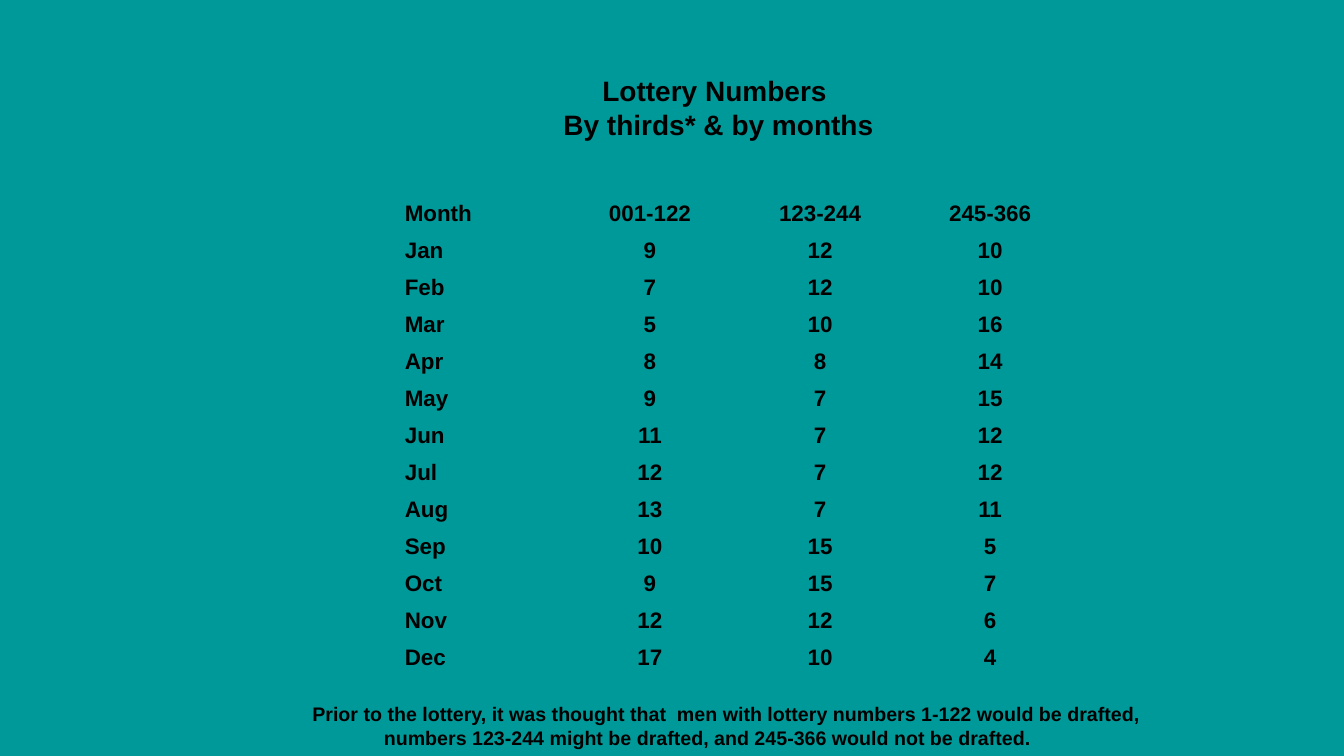
import pptx
import pptx.dml.color
import pptx.enum.text
import pptx.util

Pt = pptx.util.Pt
ALIGN = pptx.enum.text.PP_ALIGN
ANCHOR = pptx.enum.text.MSO_ANCHOR
NO_GRID_STYLE = "{2D5ABB26-0587-4C30-8999-92F81FD0307C}"

LOTTERY_ROWS = [
    ("Month", "001-122", "123-244", "245-366"),
    ("Jan", 9, 12, 10),
    ("Feb", 7, 12, 10),
    ("Mar", 5, 10, 16),
    ("Apr", 8, 8, 14),
    ("May", 9, 7, 15),
    ("Jun", 11, 7, 12),
    ("Jul", 12, 7, 12),
    ("Aug", 13, 7, 11),
    ("Sep", 10, 15, 5),
    ("Oct", 9, 15, 7),
    ("Nov", 12, 12, 6),
    ("Dec", 17, 10, 4),
]


def color(hex_string):
    """Return the colour for a hex string."""
    return pptx.dml.color.RGBColor.from_string(hex_string)


def write_text(paragraph, text, size=16, align=ALIGN.CENTER, indent=0):
    """Write bold black text into a paragraph."""
    paragraph.alignment = align
    if indent:
        paragraph._p.get_or_add_pPr().set("marL", str(Pt(indent)))
    run = paragraph.add_run()
    run.text = text
    run.font.name = "Arial"
    run.font.size = Pt(size)
    run.font.bold = True
    run.font.color.rgb = color("000000")


def add_text_box(slide, left, top, width, height, lines, size, wrap, margin_top=3.6):
    """Add a text box from pairs of text and left indent."""
    box = slide.shapes.add_textbox(Pt(left), Pt(top), Pt(width), Pt(height))
    frame = box.text_frame
    frame.word_wrap = wrap
    frame.margin_top = Pt(margin_top)
    for index, (text, indent) in enumerate(lines):
        paragraph = frame.add_paragraph() if index else frame.paragraphs[0]
        write_text(paragraph, text, size=size, indent=indent)


def add_lottery_table(slide, left, top, column_width, row_height):
    """Add the unfilled table of lottery numbers by month."""
    row_count, column_count = len(LOTTERY_ROWS), len(LOTTERY_ROWS[0])
    frame = slide.shapes.add_table(
        row_count, column_count, Pt(left), Pt(top),
        Pt(column_width * column_count), Pt(row_height * row_count))
    table = frame.table
    table.first_row = False
    table.horz_banding = False
    table._tbl.tblPr.find(pptx.oxml.ns.qn("a:tableStyleId")).text = NO_GRID_STYLE
    for column in table.columns:
        column.width = Pt(column_width)
    for row, values in zip(table.rows, LOTTERY_ROWS):
        row.height = Pt(row_height)
        for index, (cell, value) in enumerate(zip(row.cells, values)):
            cell.fill.background()
            cell.vertical_anchor = ANCHOR.BOTTOM
            align = ALIGN.CENTER if index else ALIGN.LEFT
            write_text(cell.text_frame.paragraphs[0], str(value), align=align)


def main():
    """Build the slide and save it."""
    presentation = pptx.Presentation()
    presentation.slide_width = Pt(960)
    presentation.slide_height = Pt(540)
    slide = presentation.slides.add_slide(presentation.slide_layouts[6])
    slide.background.fill.solid()
    slide.background.fill.fore_color.rgb = color("009999")

    add_lottery_table(slide, left=282, top=139, column_width=121.5, row_height=26.42)
    title = [("Lottery Numbers ", 0), ("By thirds* & by months", 0)]
    add_text_box(slide, 394.5, 49, 237.5, 55.5, title, size=20, wrap=False)
    note = [
        ("Prior to the lottery, it was thought that  men with lottery numbers "
         "1-122 would be drafted,", 162),
        ("numbers 123-244 might be drafted, and 245-366 would not be drafted.", 135),
    ]
    add_text_box(slide, 46, 487.5, 784, 52, note, size=14, wrap=True, margin_top=14)
    presentation.save("out.pptx")


if __name__ == "__main__":
    main()
